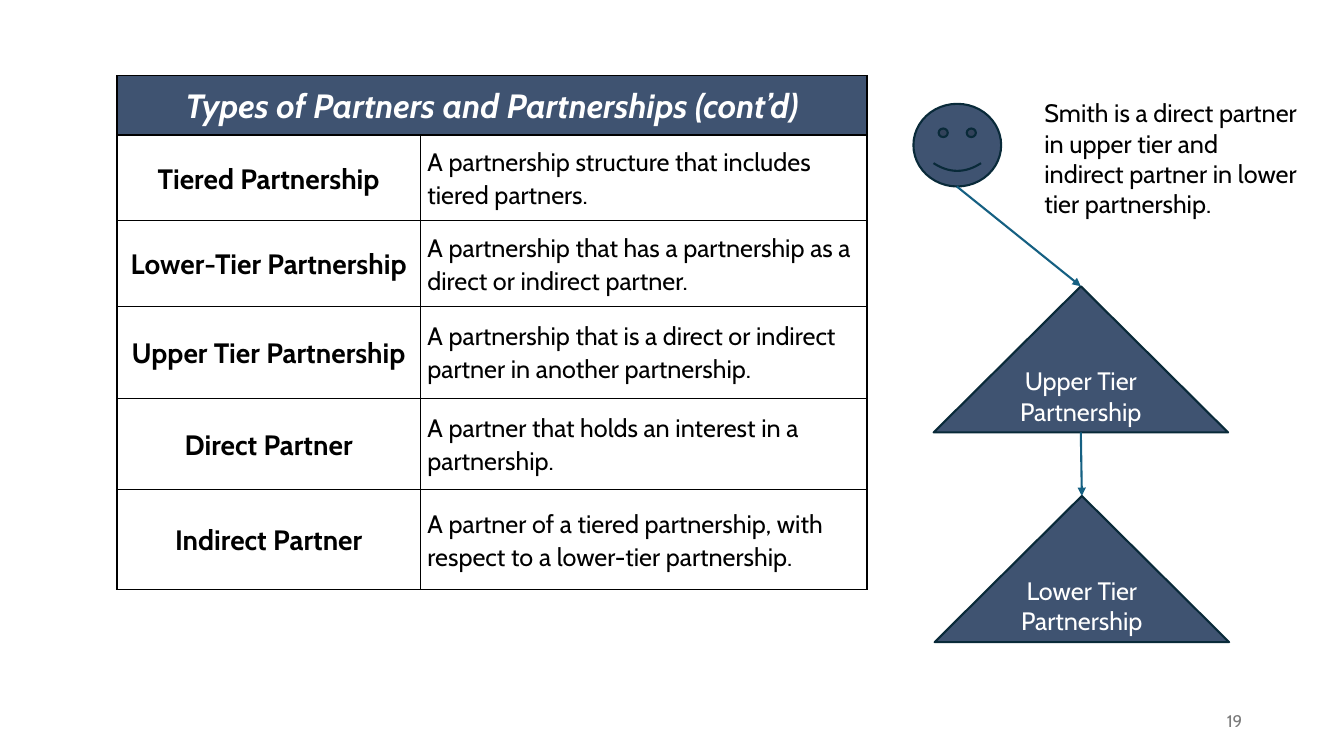
from lxml import etree
from pptx import Presentation
from pptx.dml.color import RGBColor
from pptx.enum.shapes import MSO_CONNECTOR, MSO_SHAPE
from pptx.enum.text import MSO_ANCHOR, PP_ALIGN
from pptx.oxml.ns import qn
from pptx.util import Inches, Pt

STRAIGHT = MSO_CONNECTOR.STRAIGHT
TRIANGLE, SMILEY = MSO_SHAPE.ISOSCELES_TRIANGLE, MSO_SHAPE.SMILEY_FACE
MIDDLE, TOP = MSO_ANCHOR.MIDDLE, MSO_ANCHOR.TOP
LEFT, CENTER, RIGHT = PP_ALIGN.LEFT, PP_ALIGN.CENTER, PP_ALIGN.RIGHT

FONT = "Cabin"
COLORS = {
    "navy": "3F5371",
    "outline": "092A39",
    "arrow": "156082",
    "black": "000000",
    "white": "FFFFFF",
    "gray": "797979",
}
HEADING = "Types of Partners and Partnerships (cont’d)"
DEFINITIONS = [
    ("Tiered Partnership", "A partnership structure that includes tiered partners."),
    ("Lower-Tier Partnership", "A partnership that has a partnership as a direct or indirect partner."),
    ("Upper Tier Partnership", "A partnership that is a direct or indirect partner in another partnership."),
    ("Direct Partner", "A partner that holds an interest in a partnership."),
    ("Indirect Partner", "A partner of a tiered partnership, with respect to a lower-tier partnership."),
]
COLUMN_WIDTHS = [3.01, 4.43]
ROW_HEIGHTS = [0.59, 0.85, 0.85, 0.91, 0.91, 0.99]


def color(name):
    return RGBColor.from_string(COLORS[name])


def write_text(frame, text, size=18, ink="black", bold=False, italic=False,
               align=LEFT, line_spacing=None, space_after=None):
    paragraph = frame.paragraphs[0]
    paragraph.alignment = align
    if line_spacing:
        paragraph.line_spacing = line_spacing
    if space_after:
        paragraph.space_after = Pt(space_after)
    run = paragraph.add_run()
    run.text = text
    run.font.name = FONT
    run.font.size = Pt(size)
    run.font.bold = bold
    run.font.italic = italic
    run.font.color.rgb = color(ink)


def add_borders(cell):
    properties = cell._tc.get_or_add_tcPr()
    for position, side in enumerate(("lnL", "lnR", "lnT", "lnB")):
        border = etree.Element(qn(f"a:{side}"), w=str(Pt(1)))
        fill = etree.SubElement(border, qn("a:solidFill"))
        etree.SubElement(fill, qn("a:srgbClr"), val=COLORS["black"])
        properties.insert(position, border)


def fill_cell(cell, text, **text_format):
    cell.vertical_anchor = MIDDLE
    cell.margin_left = cell.margin_right = Inches(0.07)
    cell.margin_top = cell.margin_bottom = 0
    write_text(cell.text_frame, text, line_spacing=1.07, space_after=6, **text_format)


def add_definitions(slide, left, top):
    table = slide.shapes.add_table(
        len(ROW_HEIGHTS), len(COLUMN_WIDTHS), Inches(left), Inches(top),
        Inches(sum(COLUMN_WIDTHS)), Inches(sum(ROW_HEIGHTS))).table
    table.horz_banding = False
    for column, width in zip(table.columns, COLUMN_WIDTHS):
        column.width = Inches(width)
    for row, height in zip(table.rows, ROW_HEIGHTS):
        row.height = Inches(height)
    for cell in table.iter_cells():
        cell.fill.background()
        add_borders(cell)

    heading = table.cell(0, 0)
    heading.merge(table.cell(0, 1))
    heading.fill.solid()
    heading.fill.fore_color.rgb = color("navy")
    fill_cell(heading, HEADING, size=24, ink="white", bold=True, italic=True, align=CENTER)
    for row, (term, meaning) in enumerate(DEFINITIONS, start=1):
        fill_cell(table.cell(row, 0), term, size=20, bold=True, align=CENTER)
        fill_cell(table.cell(row, 1), meaning)


def add_entity(slide, kind, left, top, width, height, label=None):
    entity = slide.shapes.add_shape(
        kind, Inches(left), Inches(top), Inches(width), Inches(height))
    entity.shadow.inherit = False
    entity.fill.solid()
    entity.fill.fore_color.rgb = color("navy")
    entity.line.color.rgb = color("outline")
    entity.line.width = Pt(1.5)
    if label:
        entity.text_frame.word_wrap = True
        entity.text_frame.vertical_anchor = MIDDLE
        write_text(entity.text_frame, label, ink="white", align=CENTER)


def add_arrow(slide, start, end):
    arrow = slide.shapes.add_connector(
        STRAIGHT, *(Inches(length) for length in (*start, *end)))
    arrow.line.color.rgb = color("arrow")
    arrow.line.width = Pt(1.5)
    etree.SubElement(arrow.line._get_or_add_ln(), qn("a:tailEnd"), type="triangle")
    etree.SubElement(arrow._element.spPr, qn("a:effectLst"))


def add_text(slide, text, left, top, width, height, anchor=TOP, **text_format):
    frame = slide.shapes.add_textbox(
        Inches(left), Inches(top), Inches(width), Inches(height)).text_frame
    frame.word_wrap = True
    frame.vertical_anchor = anchor
    write_text(frame, text, **text_format)


def main():
    deck = Presentation()
    deck.slide_width, deck.slide_height = Inches(13.33), Inches(7.5)
    slide = deck.slides.add_slide(deck.slide_layouts[6])

    add_definitions(slide, 1.16, 0.75)
    add_entity(slide, TRIANGLE, 9.27, 4.92, 2.92, 1.45, "Lower Tier Partnership")
    add_entity(slide, TRIANGLE, 9.26, 2.84, 2.92, 1.45, "Upper Tier Partnership")
    add_entity(slide, SMILEY, 9.06, 1.03, 0.87, 0.82)
    add_arrow(slide, (9.49, 1.85), (10.72, 2.84))
    add_arrow(slide, (10.72, 4.29), (10.73, 4.92))
    add_text(slide, "Smith is a direct partner in upper tier and indirect partner "
             "in lower tier partnership.", 10.26, 0.92, 2.75, 1.31)
    add_text(slide, "19", 9.42, 6.95, 3, 0.4, anchor=MIDDLE,
             size=12, ink="gray", align=RIGHT)

    deck.save("out.pptx")


if __name__ == "__main__":
    main()
